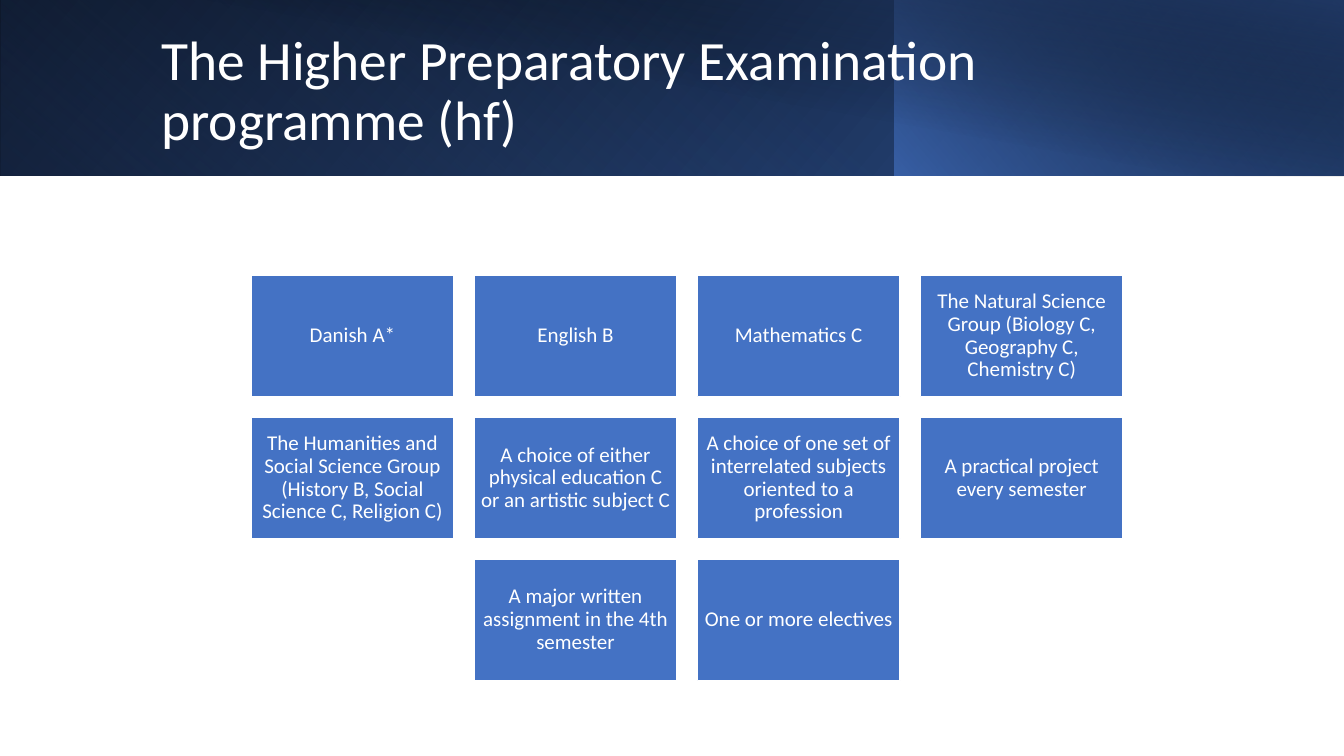
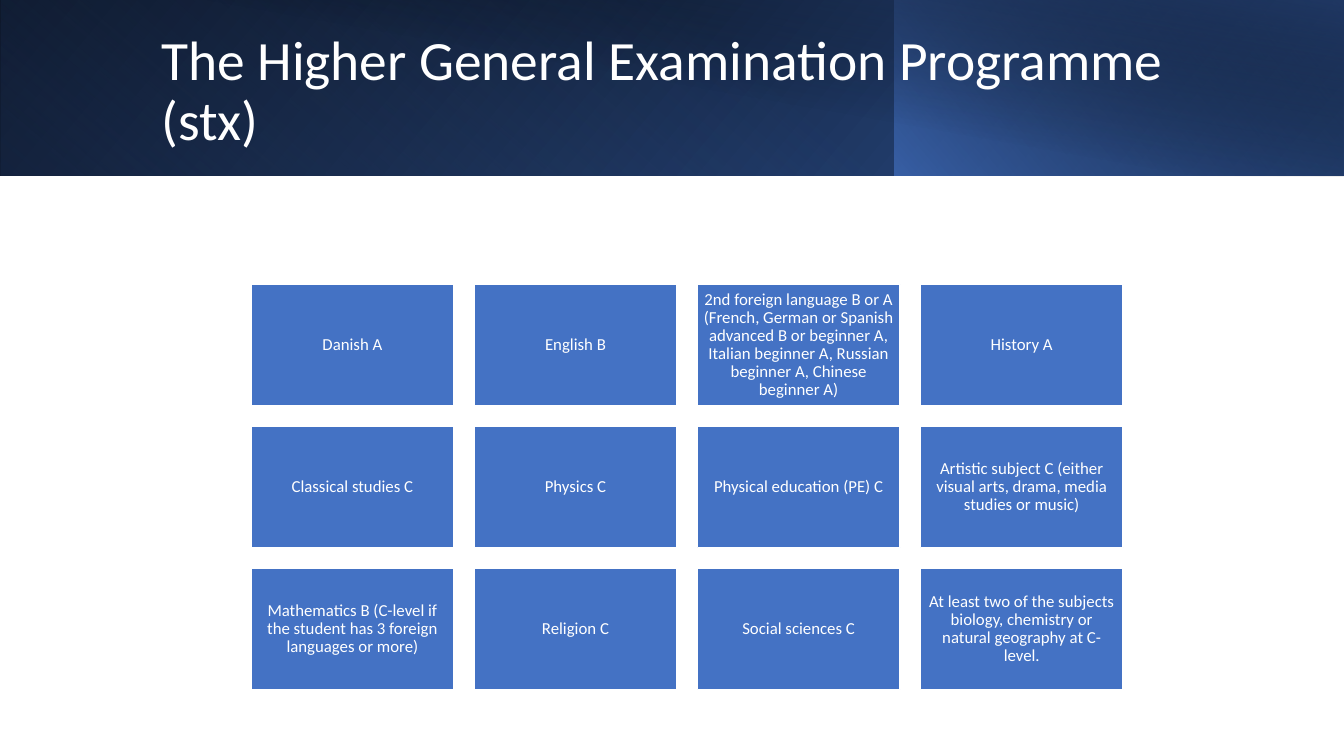
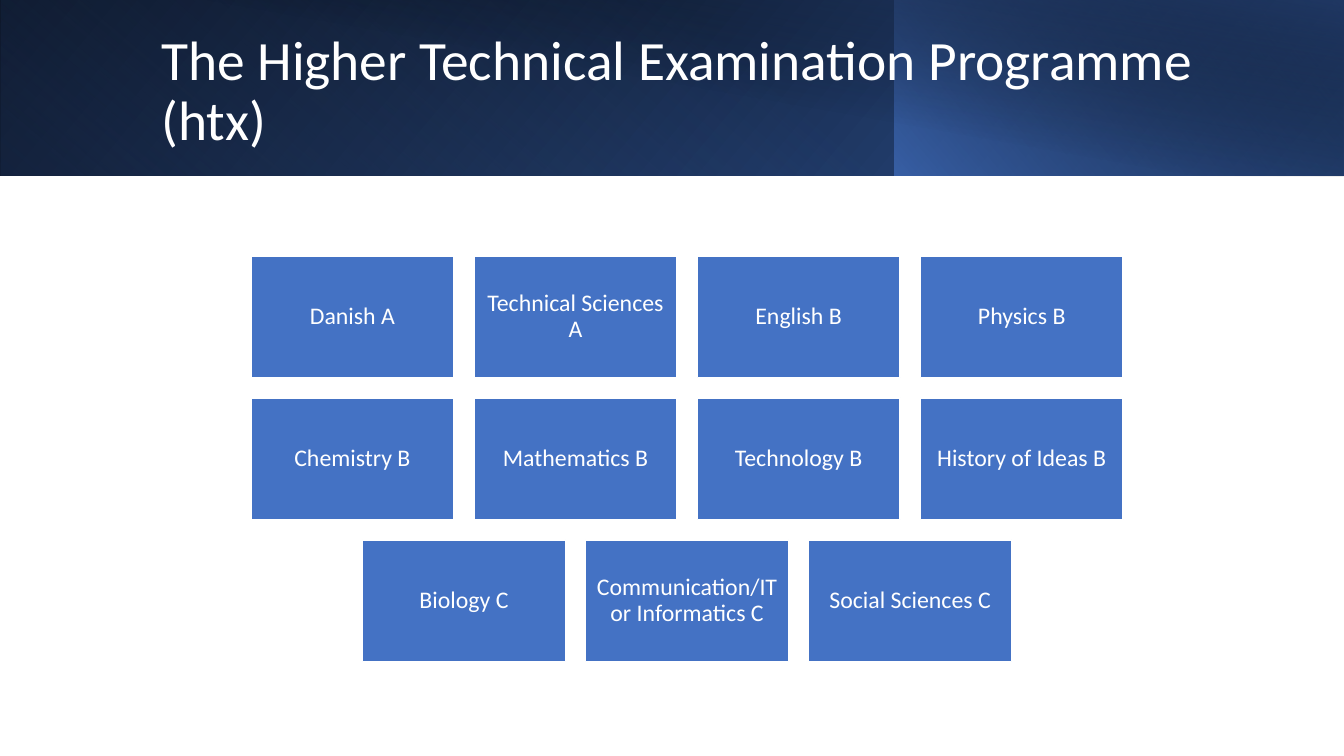
import pptx
import pptx.util
import pptx.dml.color
import pptx.enum.shapes
import pptx.enum.text
import lxml.etree
from pptx.util import Inches

WHITE = pptx.dml.color.RGBColor(0xFF, 0xFF, 0xFF)
BLACK = pptx.dml.color.RGBColor(0x00, 0x00, 0x00)
BLUE = pptx.dml.color.RGBColor(0x44, 0x72, 0xC4)
DEEP_BLUE = pptx.dml.color.RGBColor(0x2F, 0x55, 0x97)
NAVY = pptx.dml.color.RGBColor(0x20, 0x38, 0x64)
FONT = "Calibri"
RECTANGLE = pptx.enum.shapes.MSO_SHAPE.RECTANGLE
MIDDLE = pptx.enum.text.MSO_ANCHOR.MIDDLE
ALIGN = pptx.enum.text.PP_ALIGN

GRID_LEFT = 2.49
GRID_WIDTH = 8.65
COLUMNS = 4
GAP_RATIO = 0.1
CARD_WIDTH = GRID_WIDTH / (COLUMNS + GAP_RATIO * (COLUMNS - 1))
CARD_HEIGHT = 0.6 * CARD_WIDTH
CARD_GAP = GAP_RATIO * CARD_WIDTH

# Each band: left, width, height, rotation, flipped, clockwise angle, (position, colour, opacity) stops
BANDS = [
    (0, 13.33, 1.74, 0, True, 140, [(0, BLACK, 100), (100, DEEP_BLUE, 100)]),
    (0, 8.88, 1.74, 180, True, 230, [(20, BLUE, 0), (100, NAVY, 55)]),
    (8.87, 4.46, 1.74, 0, True, 220, [(0, BLUE, 66), (100, BLACK, 30)]),
    (0.5, 12.83, 1.75, 0, False, 280, [(50, BLACK, 0), (99, NAVY, 52)]),
]

PROGRAMMES = [
    ("The Higher Preparatory Examination programme (hf)", 2.73, 15, [
        "Danish A*",
        "English B",
        "Mathematics C",
        "The Natural Science Group (Biology C, Geography C, Chemistry C)",
        "The Humanities and Social Science Group (History B, Social Science C, Religion C)",
        "A choice of either physical education C or an artistic subject C",
        "A choice of one set of interrelated subjects oriented to a profession",
        "A practical project every semester",
        "A major written assignment in the 4th semester",
        "One or more electives",
    ]),
    ("The Higher General Examination Programme (stx)", 2.82, 12, [
        "Danish A",
        "English B",
        "2nd foreign language B or A (French, German or Spanish advanced B or beginner A, "
        "Italian beginner A, Russian beginner A, Chinese beginner A)",
        "History A",
        "Classical studies C",
        "Physics C",
        "Physical education (PE) C",
        "Artistic subject C (either visual arts, drama, media studies or music)",
        "Mathematics B (C-level if the student has 3 foreign languages or more)",
        "Religion C",
        "Social sciences C",
        "At least two of the subjects biology, chemistry or natural geography at C-level.",
    ]),
    ("The Higher Technical Examination Programme (htx)", 2.54, 17, [
        "Danish A",
        "Technical Sciences A",
        "English B",
        "Physics B",
        "Chemistry B",
        "Mathematics B",
        "Technology B",
        "History of Ideas B",
        "Biology C",
        "Communication/IT or Informatics C",
        "Social Sciences C",
    ]),
]


def set_text(frame, text, size, align):
    frame.text = text
    frame.word_wrap = True
    frame.auto_size = pptx.enum.text.MSO_AUTO_SIZE.NONE
    frame.vertical_anchor = MIDDLE
    paragraph = frame.paragraphs[0]
    paragraph.alignment = align
    paragraph.line_spacing = 0.9
    font = paragraph.runs[0].font
    font.name = FONT
    font.size = pptx.util.Pt(size)
    font.color.rgb = WHITE


def add_rectangle(slide, left, top, width, height):
    rectangle = slide.shapes.add_shape(
        RECTANGLE, Inches(left), Inches(top), Inches(width), Inches(height))
    rectangle.shadow.inherit = False
    return rectangle


def set_gradient(fill, angle, stops):
    fill.gradient()
    fill.gradient_angle = 360 - angle
    for stop, (position, colour, opacity) in zip(fill.gradient_stops, stops):
        stop.position = position / 100
        stop.color.rgb = colour
        if opacity < 100:
            alpha = lxml.etree.SubElement(stop._gs[0], pptx.oxml.ns.qn("a:alpha"))
            alpha.set("val", str(opacity * 1000))


def add_header(slide, text):
    title = slide.shapes.title
    for left, width, height, rotation, flipped, angle, stops in BANDS:
        band = add_rectangle(slide, left, 0, width, height)
        band.rotation = rotation
        band.line.fill.background()
        set_gradient(band.fill, angle, stops)
        if flipped:
            band._element.spPr.xfrm.set("flipH", "1")
        title._element.addprevious(band._element)
    title.left, title.top = Inches(1.5), Inches(0.35)
    title.width, title.height = Inches(10.82), Inches(1.13)
    set_text(title.text_frame, text, 39.6, ALIGN.LEFT)


def add_card(slide, left, top, text, size):
    card = add_rectangle(slide, left, top, CARD_WIDTH, CARD_HEIGHT)
    card.fill.solid()
    card.fill.fore_color.rgb = BLUE
    card.line.color.rgb = WHITE
    card.line.width = pptx.util.Pt(1)
    frame = card.text_frame
    inset = pptx.util.Pt(0.3 * size)
    frame.margin_left = frame.margin_right = inset
    frame.margin_top = frame.margin_bottom = inset
    set_text(frame, text, size, ALIGN.CENTER)


def add_subject_grid(slide, top, size, subjects):
    pitch = CARD_WIDTH + CARD_GAP
    for start in range(0, len(subjects), COLUMNS):
        row = subjects[start:start + COLUMNS]
        row_left = GRID_LEFT + (COLUMNS - len(row)) * pitch / 2
        row_top = top + start // COLUMNS * (CARD_HEIGHT + CARD_GAP)
        for column, subject in enumerate(row):
            add_card(slide, row_left + column * pitch, row_top, subject, size)


def main():
    deck = pptx.Presentation()
    deck.slide_width, deck.slide_height = Inches(13.33), Inches(7.5)
    title_only = deck.slide_layouts[5]
    for heading, grid_top, size, subjects in PROGRAMMES:
        slide = deck.slides.add_slide(title_only)
        add_header(slide, heading)
        add_subject_grid(slide, grid_top, size, subjects)
    deck.save("out.pptx")


if __name__ == "__main__":
    main()
